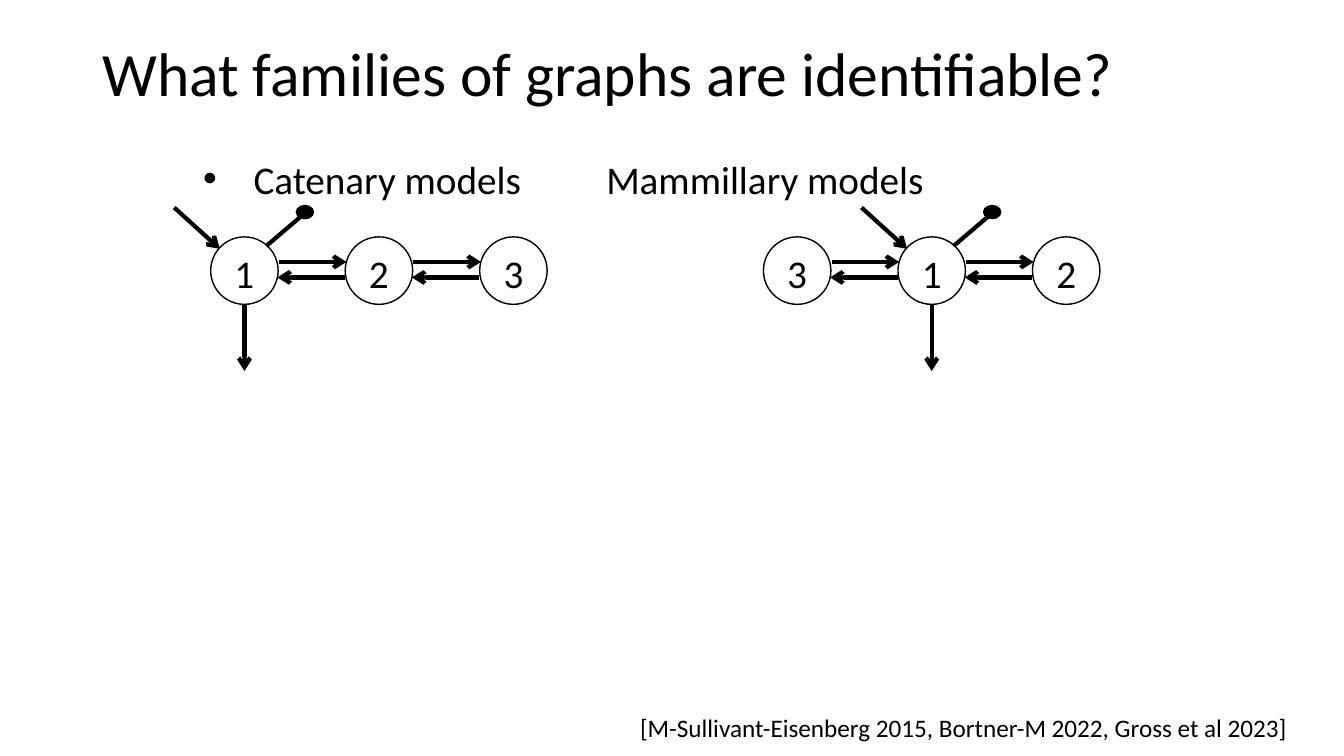
from lxml import etree
from pptx import Presentation
from pptx.dml.color import RGBColor
from pptx.enum.shapes import MSO_CONNECTOR, MSO_SHAPE
from pptx.enum.text import MSO_ANCHOR, PP_ALIGN
from pptx.oxml.ns import qn
from pptx.util import Cm, Pt

OVAL = MSO_SHAPE.OVAL
STRAIGHT = MSO_CONNECTOR.STRAIGHT
TOP, MIDDLE = MSO_ANCHOR.TOP, MSO_ANCHOR.MIDDLE
CENTER = PP_ALIGN.CENTER

COLORS = {"ink": "000000"}
FONT = "Calibri"

# Geometry of a compartment graph, in cm
NODE_Y = 6.82
NODE_SIZE = 1.7
NODE_STEP = 3.39


def ink():
    return RGBColor.from_string(COLORS["ink"])


def write(para, text, size):
    span = para.add_run()
    span.text = text
    formats = {"name": FONT, "size": Pt(size)}
    for name, value in formats.items():
        setattr(span.font, name, value)
    span.font.color.rgb = ink()


def add_text(page, text, place, size, anchor=TOP, wrap=True):
    box = page.shapes.add_textbox(*(Cm(length) for length in place))
    frame = box.text_frame
    frame.word_wrap = wrap
    frame.vertical_anchor = anchor
    para = frame.paragraphs[0]
    write(para, text, size)
    return para


def add_bullet(para, margin, indent):
    props = para._p.get_or_add_pPr()
    props.set("marL", str(Cm(margin)))
    props.set("indent", str(Cm(indent)))
    etree.SubElement(props, qn("a:buFont")).set("typeface", "Arial")
    etree.SubElement(props, qn("a:buChar")).set("char", "•")


def add_oval(page, left, top, width, height, filled=False):
    oval = page.shapes.add_shape(OVAL, Cm(left), Cm(top), Cm(width), Cm(height))
    oval.shadow.inherit = False
    if filled:
        oval.fill.solid()
        oval.fill.fore_color.rgb = ink()
    else:
        oval.fill.background()
    oval.line.color.rgb = ink()
    oval.line.width = Pt(1)
    return oval


def add_node(page, x, label):
    radius = NODE_SIZE / 2
    node = add_oval(page, x - radius, NODE_Y - radius, NODE_SIZE, NODE_SIZE)
    formats = {
        "margin_left": 0, "margin_right": 0, "margin_top": Cm(0.1),
        "margin_bottom": 0, "vertical_anchor": MIDDLE, "word_wrap": False,
    }
    for name, value in formats.items():
        setattr(node.text_frame, name, value)
    para = node.text_frame.paragraphs[0]
    para.alignment = CENTER
    write(para, label, 28)


def add_line(page, x, start, end, arrow=True):
    """Draw a line whose ends are offsets from the node centre at x."""
    ends = [Cm(length) for dx, dy in (start, end) for length in (x + dx, NODE_Y + dy)]
    line = page.shapes.add_connector(STRAIGHT, *ends)
    line.line.color.rgb = ink()
    line.line.width = Pt(3)
    if arrow:
        tail = etree.SubElement(line.line._get_or_add_ln(), qn("a:tailEnd"))
        tail.set("type", "arrow")
    etree.SubElement(line._element.spPr, qn("a:effectLst"))


def add_graph(page, first_x, labels):
    for index, label in enumerate(labels):
        x = first_x + index * NODE_STEP
        add_node(page, x, label)

        # Exchange with the next compartment
        if index < len(labels) - 1:
            add_line(page, x, (0.87, -0.22), (2.57, -0.22))
            add_line(page, x, (2.53, 0.17), (0.83, 0.17))

        # Input, leak and observation of compartment 1
        if label == "1":
            add_line(page, x, (-1.77, -1.59), (-0.62, -0.55))
            add_line(page, x, (0, 0.85), (0, 2.53))
            add_line(page, x, (0.55, -0.62), (1.44, -1.38), arrow=False)
            add_oval(page, x + 1.31, NODE_Y - 1.64, 0.43, 0.33, filled=True)


def main():
    deck = Presentation()
    deck.slide_width, deck.slide_height = Cm(33.87), Cm(19.05)
    page = deck.slides.add_slide(deck.slide_layouts[6])

    # Title and model names
    title = add_text(page, "What families of graphs are identifiable?",
                     (2.33, 0.08, 29.21, 3.68), 44, MIDDLE)
    title.line_spacing = 0.9
    models = add_text(page, "Catenary models\t\tMammillary models",
                      (2.33, 3.78, 29.21, 8.64), 28)
    add_bullet(models, 3.81, -1.27)

    # Compartment graphs
    add_graph(page, 6.16, "123")
    add_graph(page, 20.09, "312")

    # References
    add_text(page, "[M-Sullivant-Eisenberg 2015, Bortner-M 2022, Gross et al 2023]",
             (15.88, 17.83, 17.17, 1.02), 18, wrap=False)

    deck.save("out.pptx")


if __name__ == "__main__":
    main()
